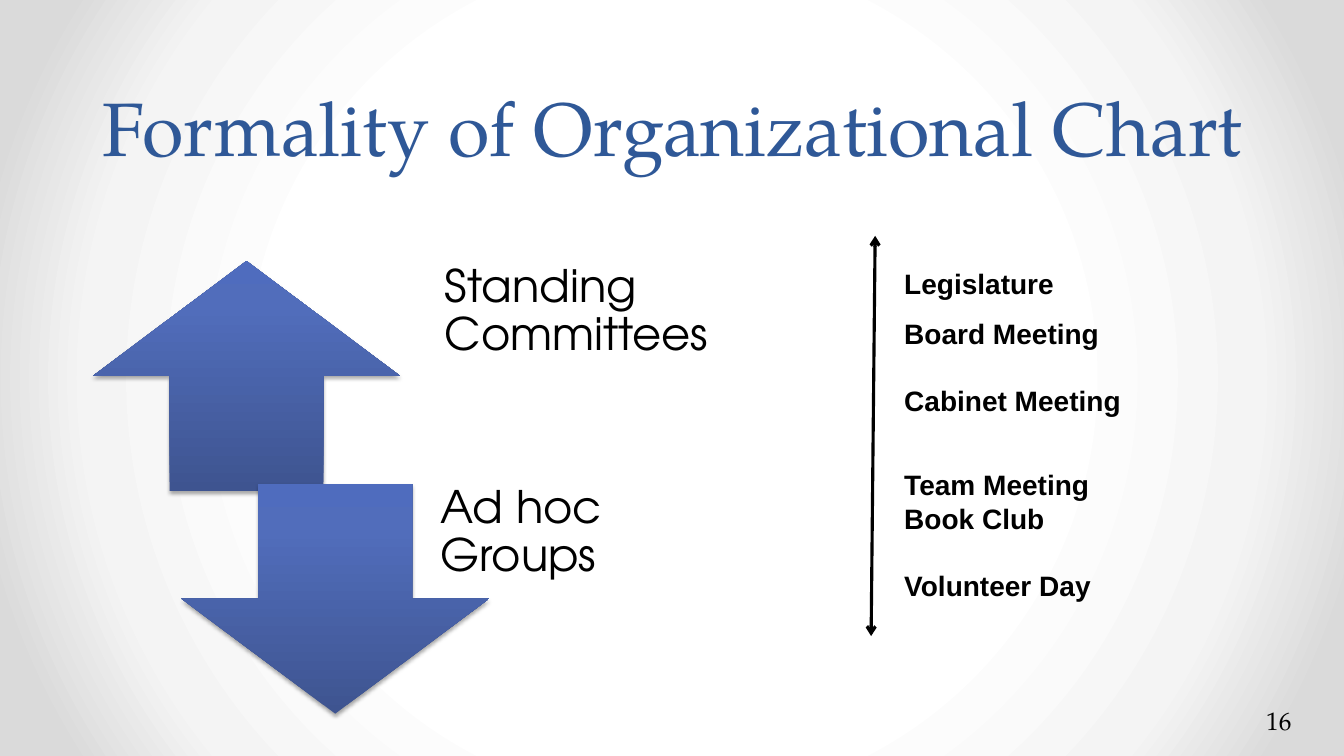
from lxml import etree
from pptx import Presentation
from pptx.dml.color import RGBColor
from pptx.enum.shapes import MSO_CONNECTOR, MSO_SHAPE
from pptx.enum.text import MSO_ANCHOR, MSO_AUTO_SIZE, PP_ALIGN
from pptx.oxml import parse_xml
from pptx.oxml.ns import nsdecls, qn
from pptx.util import Inches, Pt

UP_ARROW, DOWN_ARROW = MSO_SHAPE.UP_ARROW, MSO_SHAPE.DOWN_ARROW
STRAIGHT = MSO_CONNECTOR.STRAIGHT
TOP, MIDDLE, BOTTOM = MSO_ANCHOR.TOP, MSO_ANCHOR.MIDDLE, MSO_ANCHOR.BOTTOM
NO_AUTOFIT = MSO_AUTO_SIZE.NONE
CENTER = PP_ALIGN.CENTER

BLACK = RGBColor(0x00, 0x00, 0x00)
TITLE_BLUE = RGBColor(0x2F, 0x58, 0x97)
WHITE = RGBColor(0xFF, 0xFF, 0xFF)
PALE_GRAY = RGBColor(0xF4, 0xF4, 0xF4)
EDGE_GRAY = RGBColor(0xDA, 0xDA, 0xDA)
DARK_BLUE = RGBColor(0x3E, 0x54, 0x90)
MID_BLUE = RGBColor(0x51, 0x6D, 0xBB)
LIGHT_BLUE = RGBColor(0x4F, 0x6C, 0xBE)

SERIF, ROUND, SANS = "TeX Gyre Pagella", "TeX Gyre Adventor", "Arial"

BACKDROP_STOPS = [(50, WHITE), (76, PALE_GRAY), (92, EDGE_GRAY)]
ARROW_STOPS = [(0, DARK_BLUE), (80, MID_BLUE), (100, LIGHT_BLUE)]
RADIAL = ('<a:path path="circle"><a:fillToRect l="50000" t="50000" '
          'r="50000" b="50000"/></a:path>')
UPWARD = '<a:lin ang="16200000" scaled="0"/>'

# Meeting name and the gap above it in points
MEETINGS = [("Legislature", 0), ("Board Meeting", 12), ("Cabinet Meeting", 24),
            ("Team Meeting", 36), ("Book Club", 0), ("Volunteer Day", 24)]


def set_gradient(fill, grad_parent, stops, direction):
    """Fill with the given (percent, colour) stops and direction XML."""
    fill.gradient()
    stop_xml = "".join(
        f'<a:gs pos="{percent * 1000}"><a:srgbClr val="{color}"/></a:gs>'
        for percent, color in stops)
    gradient = parse_xml(f'<a:gradFill {nsdecls("a")} rotWithShape="1">'
                         f'<a:gsLst>{stop_xml}</a:gsLst>{direction}</a:gradFill>')
    grad_parent.replace(grad_parent.find(qn("a:gradFill")), gradient)


def style_font(paragraph, name, size, color=BLACK, bold=False):
    font = paragraph.font
    font.name, font.size, font.bold = name, Pt(size), bold
    font.color.rgb = color


def add_title(slide, text):
    title = slide.shapes.title
    title.left, title.top = Inches(0.67), Inches(0)
    title.width, title.height = Inches(12), Inches(1.75)
    frame = title.text_frame
    frame.text = text
    frame.auto_size = NO_AUTOFIT
    frame.vertical_anchor = BOTTOM
    heading = frame.paragraphs[0]
    heading.alignment = CENTER
    heading.line_spacing = Pt(58)
    style_font(heading, SERIF, 54, TITLE_BLUE)


def add_block_arrow(slide, preset, left, top):
    arrow = slide.shapes.add_shape(preset, Inches(left), Inches(top),
                                   Inches(3.05), Inches(2.28))
    set_gradient(arrow.fill, arrow._element.spPr, ARROW_STOPS, UPWARD)
    arrow.line.fill.background()
    arrow._element.spPr.append(parse_xml(
        f'<a:effectLst {nsdecls("a")}>'
        f'<a:outerShdw blurRad="{Pt(3.1)}" dist="{Pt(1.8)}" dir="5400000" '
        f'rotWithShape="0"><a:srgbClr val="{BLACK}"><a:alpha val="35000"/>'
        '</a:srgbClr></a:outerShdw></a:effectLst>'))


def add_text_frame(slide, left, top, width, height, anchor=TOP):
    box = slide.shapes.add_textbox(Inches(left), Inches(top),
                                   Inches(width), Inches(height))
    frame = box.text_frame
    frame.word_wrap = True
    frame.vertical_anchor = anchor
    return frame


def add_group_label(slide, text, left, top, width, height):
    frame = add_text_frame(slide, left, top, width, height, MIDDLE)
    frame.margin_left = frame.margin_right = frame.margin_bottom = Inches(0.25)
    frame.margin_top = 0
    frame.text = text
    label = frame.paragraphs[0]
    label.line_spacing = 0.9
    style_font(label, ROUND, 32)


def add_meetings(slide):
    frame = add_text_frame(slide, 8.87, 2.59, 2.8, 3.47)
    for index, (name, gap) in enumerate(MEETINGS):
        meeting = frame.paragraphs[0] if index == 0 else frame.add_paragraph()
        meeting.text = name
        meeting.line_spacing = Pt(24)
        meeting.space_before = Pt(gap)
        style_font(meeting, SANS, 20, bold=True)


def add_formality_axis(slide):
    axis = slide.shapes.add_connector(STRAIGHT, Inches(8.68), Inches(2.34),
                                      Inches(8.64), Inches(6.31))
    axis.line.color.rgb = BLACK
    axis.line.width = Pt(2.25)
    outline = axis.line._get_or_add_ln()
    for end in ("a:headEnd", "a:tailEnd"):
        etree.SubElement(outline, qn(end), type="arrow")
    etree.SubElement(axis._element.spPr, qn("a:effectLst"))


def add_page_number(slide, number):
    frame = add_text_frame(slide, 12.46, 6.95, 0.82, 0.4)
    frame.text = number
    style_font(frame.paragraphs[0], SERIF, 18)


def main():
    prs = Presentation()
    prs.slide_width, prs.slide_height = Inches(13.33), Inches(7.5)
    slide = prs.slides.add_slide(prs.slide_layouts[5])

    # Backdrop and title
    backdrop = slide.background.fill
    set_gradient(backdrop, slide._element.cSld.bg.bgPr, BACKDROP_STOPS, RADIAL)
    add_title(slide, "Formality of Organizational Chart")

    # Two directions of formality
    add_block_arrow(slide, UP_ARROW, 0.92, 2.59)
    add_group_label(slide, "Standing Committees", 4.16, 2.71, 3.84, 1.02)
    add_block_arrow(slide, DOWN_ARROW, 1.8, 4.8)
    add_group_label(slide, "Ad hoc Groups", 4.12, 5.02, 3.66, 0.78)

    # Meetings from most to least formal
    add_meetings(slide)
    add_formality_axis(slide)
    add_page_number(slide, "16")

    prs.save("out.pptx")


if __name__ == "__main__":
    main()
